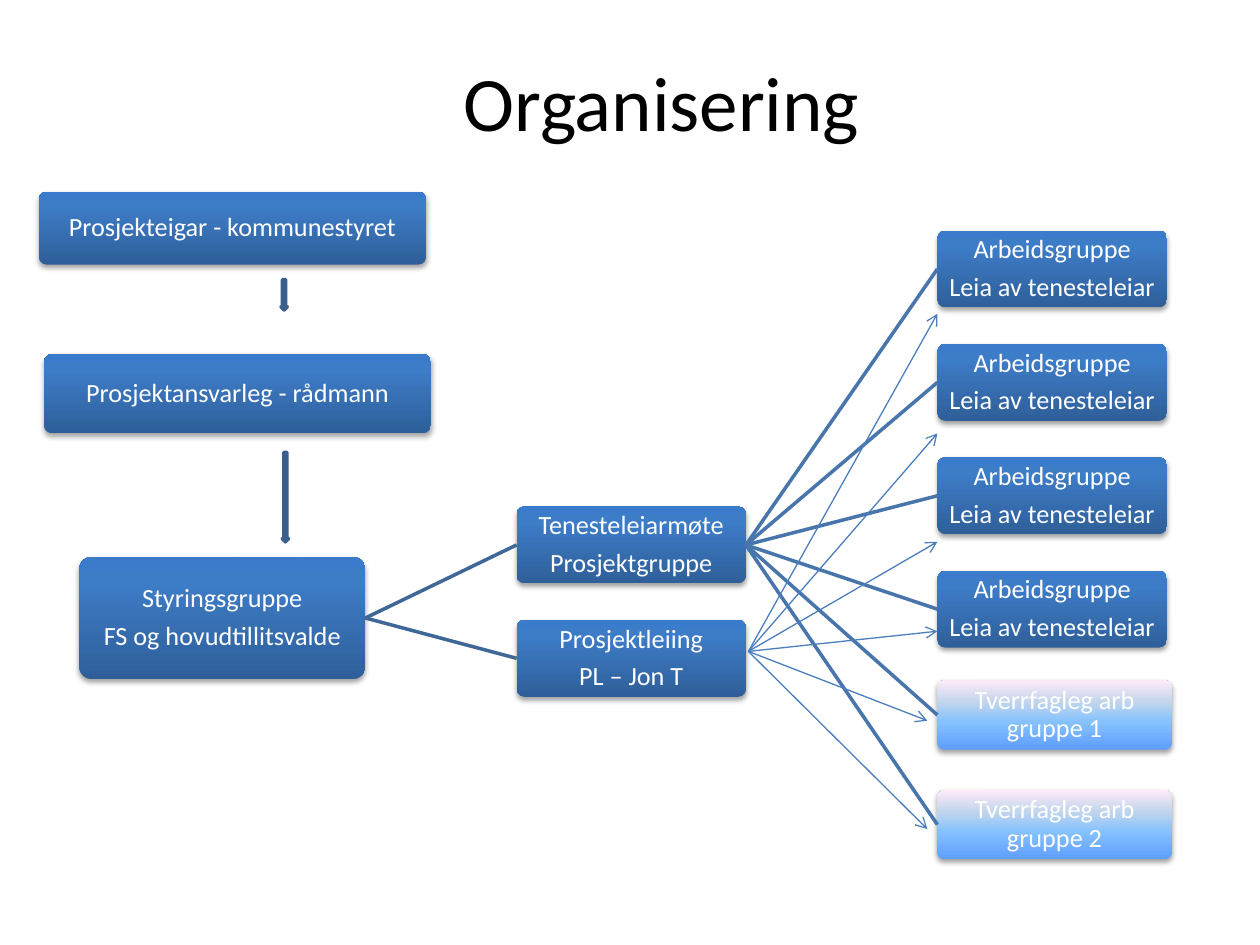
from dataclasses import dataclass

from lxml import etree
from pptx import Presentation
from pptx.dml.color import RGBColor
from pptx.enum.shapes import MSO_CONNECTOR, MSO_SHAPE
from pptx.enum.text import MSO_ANCHOR, PP_ALIGN
from pptx.oxml.ns import qn
from pptx.util import Inches, Pt

ROUND, DOWN = MSO_SHAPE.ROUNDED_RECTANGLE, MSO_SHAPE.DOWN_ARROW
STRAIGHT = MSO_CONNECTOR.STRAIGHT
MIDDLE, CENTER = MSO_ANCHOR.MIDDLE, PP_ALIGN.CENTER
LEFT, RIGHT = 1, 3  # connection sites
COLS, ROWS = 100, 75
UNIT = Inches(0.1)  # one grid cell


@dataclass(frozen=True)
class Theme:
    font: str = "Calibri"
    title: float = 44
    body: float = 15
    after: float = 5.25
    black: str = "000000"
    white: str = "FFFFFF"
    arrow: str = "4F81BD"
    edge: str = "3A5F8C"
    stem: str = "3F6797"
    branch: str = "4875AC"
    thin: str = "4B7EBC"
    blue: tuple = ((0, "2F5F99"), (80, "3D7CC7"), (100, "3A7CCB"))
    pale: tuple = ((0, "5E9EFF"), (40, "85C2FF"), (70, "C4D6EB"), (100, "FFEBFA"))


@dataclass(frozen=True)
class Box:
    """An area in columns and rows of the slide grid."""
    x: float
    y: float
    w: float
    h: float

    def sub(self, x, y, w, h):
        return Box(self.x + x, self.y + y, w, h)

    def place(self):
        return [round(v * UNIT) for v in (self.x, self.y, self.w, self.h)]


THEME = Theme()


def rgb(code):
    return RGBColor.from_string(code)


def add(node, tag, **attrs):
    return etree.SubElement(node, qn(tag), {k: str(v) for k, v in attrs.items()})


def style(para, size, color):
    para.alignment = CENTER
    para.font.name = THEME.font
    para.font.size = Pt(size)
    para.font.color.rgb = rgb(color)


def shade(shape, stops):
    """Gradient from bottom to top, with a soft shadow below."""
    shape.fill.gradient()
    shape.fill.gradient_angle = 90
    props = shape._element.spPr
    grad = props.find(qn("a:gradFill")).find(qn("a:gsLst"))
    for old in list(grad):
        grad.remove(old)
    for pos, code in stops:
        add(add(grad, "a:gs", pos=pos * 1000), "a:srgbClr", val=code)
    shape.line.fill.background()
    shape.shadow.inherit = False
    glow = add(props.find(qn("a:effectLst")), "a:outerShdw", blurRad=Pt(3.1),
               dist=Pt(1.7), dir=5400000, rotWithShape=0)
    add(add(glow, "a:srgbClr", val=THEME.black), "a:alpha", val=37000)


def add_card(slide, box, lines, stops=THEME.blue):
    card = slide.shapes.add_shape(ROUND, *box.place())
    card.adjustments[0] = 0.1
    shade(card, stops)
    frame = card.text_frame
    frame.word_wrap = True
    frame.vertical_anchor = MIDDLE
    frame.margin_left = frame.margin_right = Inches(0.01)
    frame.margin_top = frame.margin_bottom = Inches(0.01)
    frame.text = "\n".join(lines)
    for para in frame.paragraphs:
        style(para, THEME.body, THEME.white)
        para.line_spacing = 0.9
        para.space_after = Pt(THEME.after)
    return card


def add_line(slide, start, end, color, width):
    ends = [round(v * UNIT) for v in (*start, *end)]
    line = slide.shapes.add_connector(STRAIGHT, *ends)
    line.line.color.rgb = rgb(color)
    line.line.width = Pt(width)
    add(line._element.spPr, "a:effectLst")
    return line


def join(slide, source, target, color):
    line = add_line(slide, (0, 0), (1, 1), color, 2)
    line.begin_connect(source, RIGHT)
    line.end_connect(target, LEFT)


def add_title(slide, box, text):
    title = slide.shapes.title
    title.left, title.top, title.width, title.height = box.place()
    title.text_frame.text = text
    title.text_frame.vertical_anchor = MIDDLE
    style(title.text_frame.paragraphs[0], THEME.title, THEME.black)


def add_lead(slide, box):
    """Chain of command; returns the steering group."""
    add_card(slide, box.sub(0, 0, 30.7, 5.8), ["Prosjekteigar - kommunestyret"])
    add_card(slide, box.sub(0.4, 12.9, 30.7, 6.3), ["Prosjektansvarleg - rådmann"])
    board = add_card(slide, box.sub(3.2, 29, 22.7, 9.7),
                     ["Styringsgruppe", "FS og hovudtillitsvalde"])
    for x, y, high in ((19.2, 7, 2.4), (19.3, 20.7, 7.1)):
        arrow = slide.shapes.add_shape(DOWN, *box.sub(x, y, 0.5, high).place())
        arrow.fill.solid()
        arrow.fill.fore_color.rgb = rgb(THEME.arrow)
        arrow.line.color.rgb = rgb(THEME.edge)
        arrow.line.width = Pt(2)
        arrow.shadow.inherit = False
    return board


def add_core(slide, box, board):
    """Project group and project lead; returns the project group."""
    texts = (["Tenesteleiarmøte", "Prosjektgruppe"], ["Prosjektleiing", "PL – Jon T"])
    cards = [add_card(slide, box.sub(0, 9 * i, box.w, 6.1), text)
             for i, text in enumerate(texts)]
    for card in cards:
        join(slide, board, card, THEME.stem)
    return cards[0]


def add_teams(slide, box, group):
    """Work groups, each joined to the project group."""
    cards = [add_card(slide, box.sub(0, 9 * i, 18.2, 6.1),
                      ["Arbeidsgruppe", "Leia av tenesteleiar"]) for i in range(4)]
    cards += [add_card(slide, box.sub(0, 35.7 + 8.7 * i, box.w, 5.5),
                       [f"Tverrfagleg arb gruppe {i + 1}"], THEME.pale)
              for i in range(2)]
    for card in cards:
        join(slide, group, card, THEME.branch)


def add_fan(slide, core, teams):
    """Thin arrows from the project lead to the work groups."""
    start = (core.x + core.w + 0.2, core.y + 11.5)
    tips = ((0, 6.6), (0, 16.1), (0, 24.7), (0, 31.8), (-0.8, 38.9), (-0.8, 47.5))
    for x, y in tips:
        line = add_line(slide, start, (teams.x + x, teams.y + y), THEME.thin, 0.75)
        add(line.line._get_or_add_ln(), "a:tailEnd", type="arrow")


def main():
    deck = Presentation()
    deck.slide_width, deck.slide_height = COLS * UNIT, ROWS * UNIT
    slide = deck.slides.add_slide(deck.slide_layouts[5])

    # Regions
    core = Box(41, 40.2, 18.2, 15.1)
    teams = Box(74.4, 18.3, 18.6, 49.9)
    add_title(slide, Box(7.5, 2.9, 90, 10.2), "Organisering")
    board = add_lead(slide, Box(3.1, 15.2, 31.1, 38.7))
    group = add_core(slide, core, board)
    add_teams(slide, teams, group)
    add_fan(slide, core, teams)

    deck.save("out.pptx")


if __name__ == "__main__":
    main()
